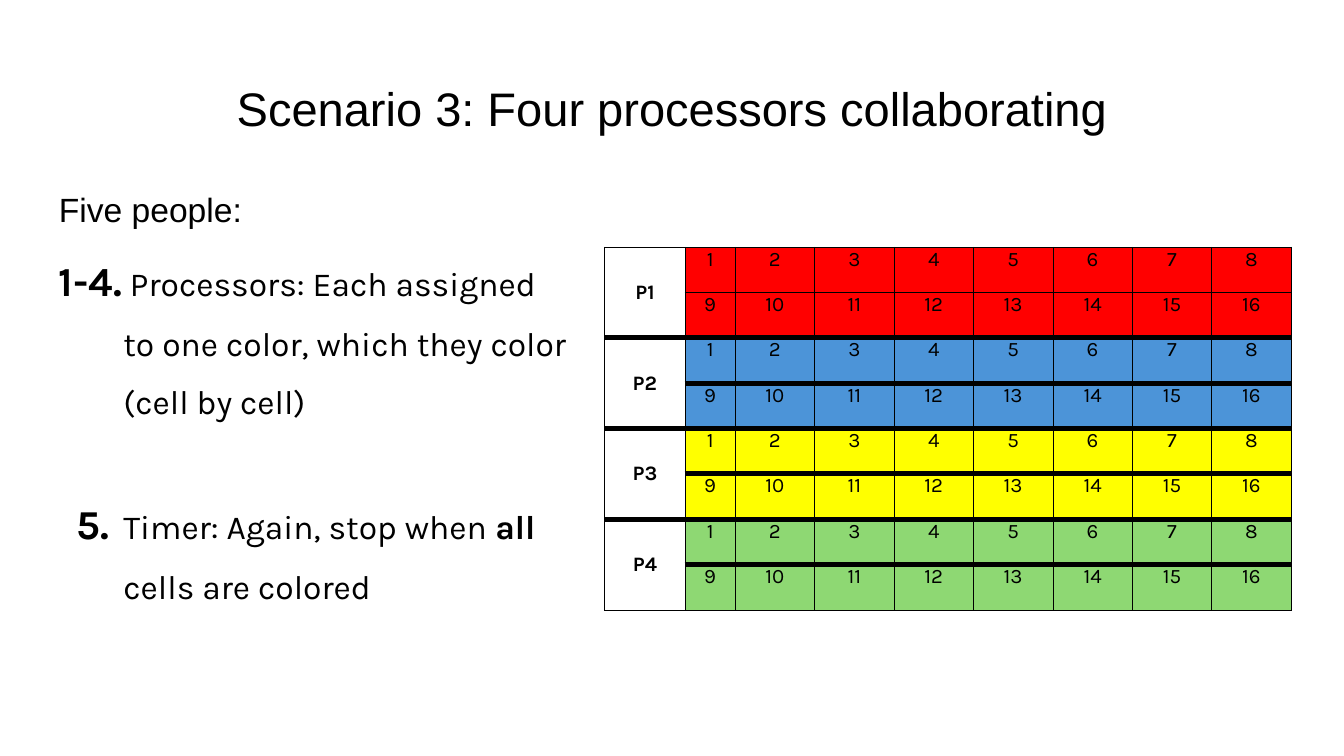
from lxml import etree
from pptx import Presentation
from pptx.dml.color import RGBColor
from pptx.enum.text import MSO_ANCHOR, MSO_AUTO_SIZE, PP_ALIGN
from pptx.oxml.ns import qn
from pptx.util import Inches, Pt

MIDDLE, TOP = MSO_ANCHOR.MIDDLE, MSO_ANCHOR.TOP
LEFT, CENTER = PP_ALIGN.LEFT, PP_ALIGN.CENTER
NO_AUTOFIT = MSO_AUTO_SIZE.NONE
TITLE_ONLY = 5
THIN, THICK = 0.5, 3
BLACK, WHITE = "000000", "FFFFFF"

PROCESSORS = {"P1": "FF0000", "P2": "4C94D8", "P3": "FFFF00", "P4": "8ED873"}
CELLS_PER_ROW = 8
ROWS_EACH = 2
COLUMN_SHARES = [0.117, 0.073] + [0.81 / 7] * 7
HANG = 0.048  # text indent under a number, as a share of the slide width


def color(hex_string):
    return RGBColor.from_string(hex_string)


class ScenarioSlide:
    """Places elements by shares of the slide's size."""

    heading_font, text_font = "Arial", "Karla"

    def __init__(self, deck):
        self.width, self.height = deck.slide_width, deck.slide_height
        self.slide = deck.slides.add_slide(deck.slide_layouts[TITLE_ONLY])

    def area(self, left, top, width, height):
        return (round(left * self.width), round(top * self.height),
                round(width * self.width), round(height * self.height))

    def frame(self, shape, anchor):
        frame = shape.text_frame
        frame.word_wrap = True
        frame.auto_size = NO_AUTOFIT
        frame.vertical_anchor = anchor
        frame.margin_left = frame.margin_right = Inches(0.1)
        frame.margin_top = frame.margin_bottom = Inches(0.1)
        return frame

    def run(self, paragraph, text, size, bold=False, font=text_font):
        run = paragraph.add_run()
        run.text = text
        run.font.name, run.font.size, run.font.bold = font, Pt(size), bold
        run.font.color.rgb = color(BLACK)

    def title(self, text, area):
        shape = self.slide.shapes.title
        shape.left, shape.top, shape.width, shape.height = self.area(*area)
        paragraph = self.frame(shape, MIDDLE).paragraphs[0]
        paragraph.alignment = CENTER
        self.run(paragraph, text, 25.2, font=self.heading_font)

    def roles(self, heading, lines, area):
        """Each line is (space before, indent, first-line indent, runs)."""
        frame = self.frame(self.slide.shapes.add_textbox(*self.area(*area)), TOP)
        paragraph = frame.paragraphs[0]
        paragraph.line_spacing = 1.15
        self.run(paragraph, heading, 18, font=self.heading_font)
        for space, indent, first_line, runs in lines:
            paragraph = frame.add_paragraph()
            paragraph.alignment = LEFT
            paragraph.line_spacing = 1.08
            paragraph.space_before = Pt(space)
            properties = paragraph._p.get_or_add_pPr()
            properties.set("marL", str(round(indent * self.width)))
            properties.set("indent", str(round(first_line * self.width)))
            for text, size, bold in runs:
                self.run(paragraph, text, size, bold)

    def borders(self, cell, top, bottom):
        properties = cell._tc.get_or_add_tcPr()
        sides = {"lnL": THIN, "lnR": THIN, "lnT": top, "lnB": bottom}
        for position, (side, weight) in enumerate(sides.items()):
            line = etree.Element(qn(f"a:{side}"), w=str(Pt(weight)))
            fill = etree.SubElement(line, qn("a:solidFill"))
            etree.SubElement(fill, qn("a:srgbClr"), val=BLACK)
            properties.insert(position, line)

    def cell(self, cell, text, fill, top, bottom, bold=False, anchor=TOP):
        cell.margin_left = cell.margin_right = Inches(0.07)
        cell.margin_top = cell.margin_bottom = 0
        cell.vertical_anchor = anchor
        cell.fill.solid()
        cell.fill.fore_color.rgb = color(fill)
        self.borders(cell, top, bottom)
        paragraph = cell.text_frame.paragraphs[0]
        paragraph.alignment = CENTER
        self.run(paragraph, text, 11, bold)

    def work_grid(self, area):
        row_count = len(PROCESSORS) * ROWS_EACH
        place = self.area(*area)
        table = self.slide.shapes.add_table(
            row_count, CELLS_PER_ROW + 1, *place).table
        table.first_row = table.horz_banding = False
        for column, share in zip(table.columns, COLUMN_SHARES):
            column.width = round(share * place[2])

        # Only the outer edges and the line inside the first block are thin.
        rules = [THICK] * (row_count + 1)
        rules[0] = rules[1] = rules[-1] = THIN

        for block, (name, fill) in enumerate(PROCESSORS.items()):
            first = block * ROWS_EACH
            end = first + ROWS_EACH
            label = table.cell(first, 0)
            label.merge(table.cell(end - 1, 0))
            self.cell(label, name, WHITE, rules[first], rules[end], True, MIDDLE)
            for row in range(first, end):
                for column in range(1, CELLS_PER_ROW + 1):
                    number = (row - first) * CELLS_PER_ROW + column
                    self.cell(table.cell(row, column), str(number), fill,
                              rules[row], rules[row + 1])


def main():
    deck = Presentation()
    deck.slide_width = Inches(10)
    deck.slide_height = deck.slide_width * 9 // 16
    scenario = ScenarioSlide(deck)
    scenario.title("Scenario 3: Four processors collaborating",
                   (0.034, 0.086, 0.932, 0.112))
    scenario.roles("Five people:", [
        (12, 0, 0, [("1-4.", 22, True),
                    (" Processors: Each assigned", 18, False)]),
        (8, HANG, 0, [("to one color, which they color", 18, False)]),
        (8, HANG, 0, [("(cell by cell)", 18, False)]),
        (39, HANG, -0.035, [("5.", 22, True),
                            ("\tTimer: Again, stop when ", 18, False),
                            ("all", 18, True)]),
        (8, HANG, 0, [("cells are colored", 18, False)]),
    ], (0.034, 0.224, 0.4, 0.665))
    scenario.work_grid((0.45, 0.327, 0.511, 0.48))
    deck.save("out.pptx")


if __name__ == "__main__":
    main()
